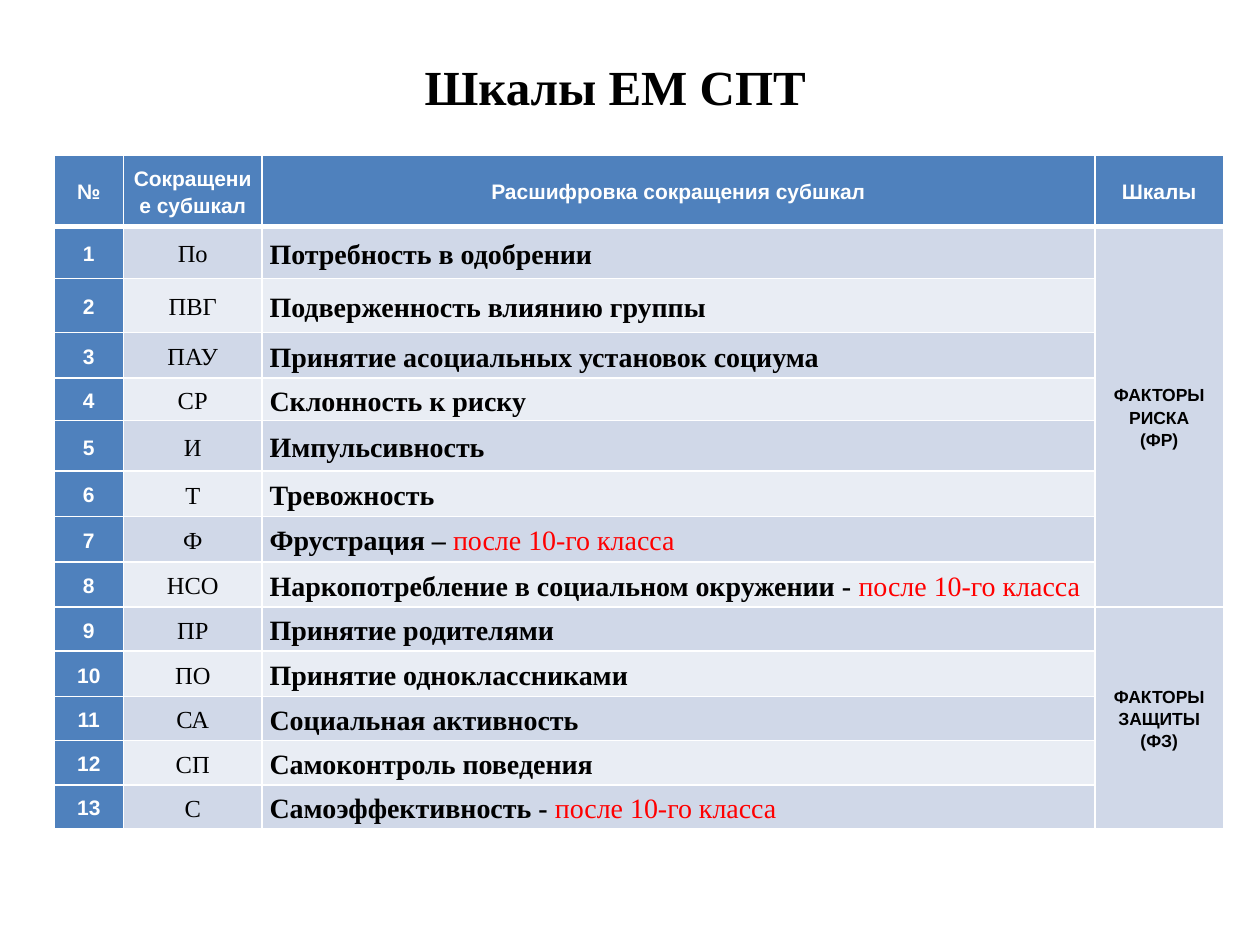
import dataclasses

import lxml.etree
import pptx
import pptx.dml.color
import pptx.enum.text
import pptx.oxml.ns
import pptx.util

Inches = pptx.util.Inches
Pt = pptx.util.Pt
Align = pptx.enum.text.PP_ALIGN
Anchor = pptx.enum.text.MSO_ANCHOR


@dataclasses.dataclass(frozen=True)
class TextStyle:
    size: float
    font: str
    color: str
    bold: bool


@dataclasses.dataclass(frozen=True)
class Theme:
    accent: str = "4F81BD"
    bands: tuple = ("D0D8E8", "E9EDF4")
    border: str = "FFFFFF"
    title: TextStyle = TextStyle(28, "Times New Roman", "000000", True)
    header: TextStyle = TextStyle(12, "Arial", "FFFFFF", True)
    code: TextStyle = TextStyle(14, "Times New Roman", "000000", False)
    name: TextStyle = TextStyle(16, "Times New Roman", "000000", True)
    note: TextStyle = TextStyle(16, "Times New Roman", "FF0000", False)
    group: TextStyle = TextStyle(10, "Arial", "000000", True)


THEME = Theme()
NOTE = "после 10-го класса"
HEADERS = ["№", "Сокращение субшкал", "Расшифровка сокращения субшкал", "Шкалы"]
SUBSCALES = [
    ("По", "Потребность в одобрении", ""),
    ("ПВГ", "Подверженность влиянию группы", ""),
    ("ПАУ", "Принятие асоциальных установок социума", ""),
    ("СР", "Склонность к риску", ""),
    ("И", "Импульсивность", ""),
    ("Т", "Тревожность", ""),
    ("Ф", "Фрустрация – ", NOTE),
    ("НСО", "Наркопотребление в социальном окружении - ", NOTE),
    ("ПР", "Принятие родителями", ""),
    ("ПО", "Принятие одноклассниками", ""),
    ("СА", "Социальная активность", ""),
    ("СП", "Самоконтроль поведения", ""),
    ("С", "Самоэффективность - ", NOTE),
]
GROUPS = [(1, 8, "ФАКТОРЫ РИСКА\n(ФР)"), (9, 13, "ФАКТОРЫ ЗАЩИТЫ\n(ФЗ)")]
COLUMN_WIDTHS = [0.55, 1.1, 6.61, 1.02]
ROW_HEIGHTS = [0.57, 0.41, 0.43, 0.36, 0.34, 0.4, 0.36, 0.36, 0.36, 0.35, 0.36, 0.35, 0.35, 0.35]


def rgb(color):
    return pptx.dml.color.RGBColor.from_string(color)


def style_run(run, style):
    run.font.size = Pt(style.size)
    run.font.name = style.font
    run.font.bold = style.bold
    run.font.color.rgb = rgb(style.color)


def add_title(slide, text):
    shape = slide.shapes.add_textbox(Inches(1.77), Inches(0.13), Inches(8.11), Inches(1.1))
    frame = shape.text_frame
    frame.word_wrap = True
    frame.vertical_anchor = Anchor.MIDDLE
    frame.margin_left = Inches(1.6)
    frame.text = text
    style_run(frame.paragraphs[0].runs[0], THEME.title)


def set_borders(cell, top=1, bottom=1):
    properties = cell._tc.get_or_add_tcPr()
    for tag, width in (("a:lnL", 1), ("a:lnR", 1), ("a:lnT", top), ("a:lnB", bottom)):
        line = lxml.etree.SubElement(properties, pptx.oxml.ns.qn(tag), w=str(Pt(width)))
        fill = lxml.etree.SubElement(line, pptx.oxml.ns.qn("a:solidFill"))
        lxml.etree.SubElement(fill, pptx.oxml.ns.qn("a:srgbClr"), val=THEME.border)


def prepare_cell(cell, row, column):
    set_borders(cell, top=3 if row == 1 else 1, bottom=3 if row == 0 else 1)
    if row == 0 or column == 0:
        color = THEME.accent
    elif column == 3:
        color = THEME.bands[0]
    else:
        color = THEME.bands[(row - 1) % 2]
    cell.fill.solid()
    cell.fill.fore_color.rgb = rgb(color)
    cell.vertical_anchor = Anchor.MIDDLE
    cell.margin_left = cell.margin_right = Inches(0.06)
    cell.margin_top = cell.margin_bottom = 0


def write_cell(cell, text, style, alignment=Align.CENTER):
    cell.text_frame.text = text
    for paragraph in cell.text_frame.paragraphs:
        paragraph.alignment = alignment
        paragraph.line_spacing = 1.15
        style_run(paragraph.runs[0], style)


def add_scales_table(slide):
    frame = slide.shapes.add_table(
        len(ROW_HEIGHTS), len(COLUMN_WIDTHS), Inches(0.43), Inches(1.23),
        Inches(sum(COLUMN_WIDTHS)), Inches(sum(ROW_HEIGHTS)))
    table = frame.table
    for column, width in zip(table.columns, COLUMN_WIDTHS):
        column.width = Inches(width)
    for row, height in zip(table.rows, ROW_HEIGHTS):
        row.height = Inches(height)
    for row in range(len(ROW_HEIGHTS)):
        for column in range(len(COLUMN_WIDTHS)):
            prepare_cell(table.cell(row, column), row, column)
    return table


def fill_headers(table):
    for column, text in enumerate(HEADERS):
        cell = table.cell(0, column)
        write_cell(cell, text, THEME.header)
        paragraph = cell.text_frame.paragraphs[0]
        paragraph.space_before = paragraph.space_after = Pt(6)


def fill_subscales(table):
    for row, (code, name, note) in enumerate(SUBSCALES, start=1):
        write_cell(table.cell(row, 0), str(row), THEME.header)
        write_cell(table.cell(row, 1), code, THEME.code)
        name_cell = table.cell(row, 2)
        write_cell(name_cell, name, THEME.name, Align.LEFT)
        if note:
            run = name_cell.text_frame.paragraphs[0].add_run()
            run.text = note
            style_run(run, THEME.note)


def fill_groups(table):
    for first, last, text in GROUPS:
        cell = table.cell(first, 3)
        cell.merge(table.cell(last, 3))
        write_cell(cell, text, THEME.group)


def main():
    presentation = pptx.Presentation()
    presentation.slide_width = Inches(10)
    presentation.slide_height = Inches(7.5)
    slide = presentation.slides.add_slide(presentation.slide_layouts[6])
    add_title(slide, "Шкалы ЕМ СПТ")
    table = add_scales_table(slide)
    fill_headers(table)
    fill_subscales(table)
    fill_groups(table)
    presentation.save("out.pptx")


if __name__ == "__main__":
    main()
